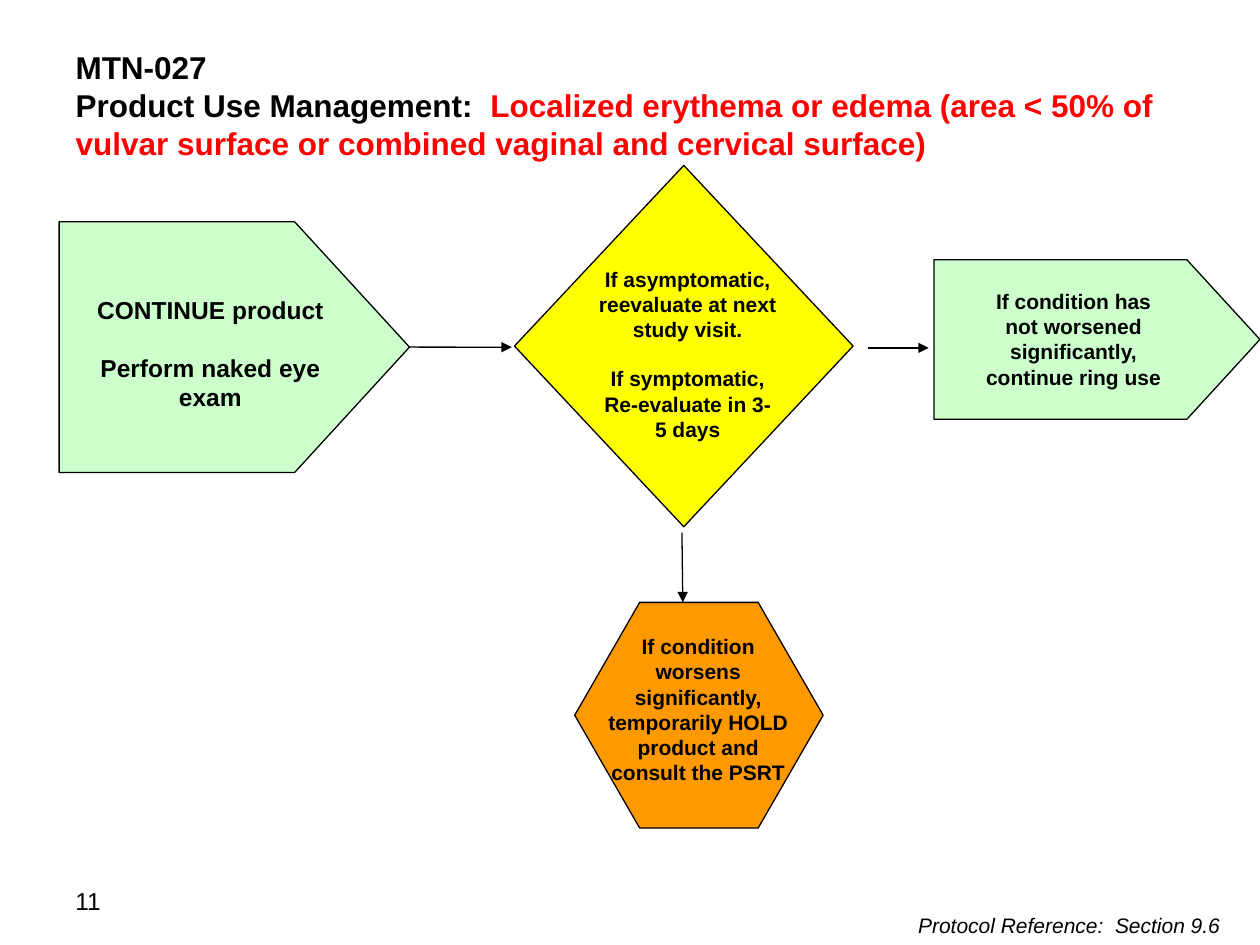
from lxml.etree import SubElement
from pptx import Presentation
from pptx.dml.color import RGBColor
from pptx.enum.shapes import MSO_CONNECTOR, MSO_SHAPE
from pptx.enum.text import MSO_ANCHOR, MSO_AUTO_SIZE, PP_ALIGN
from pptx.oxml.ns import qn
from pptx.util import Pt

BLACK, RED = "000000", "FF0000"
GREEN, YELLOW, ORANGE = "CCFFCC", "FFFF00", "FF9900"


def color(hex_value):
    return RGBColor.from_string(hex_value)


def write(holder, box, paragraphs, size, align, bold=False, italic=False, gap=0):
    """Place a text holder and fill it; each paragraph is a list of (text, colour) runs."""
    holder.left, holder.top, holder.width, holder.height = map(Pt, box)
    frame = holder.text_frame
    frame.word_wrap = True
    frame.auto_size = MSO_AUTO_SIZE.NONE
    frame.vertical_anchor = MSO_ANCHOR.TOP
    for index, runs in enumerate(paragraphs):
        paragraph = frame.add_paragraph() if index else frame.paragraphs[0]
        paragraph.alignment = align
        paragraph.space_before = Pt(gap if index else 0)
        for text, ink in runs:
            run = paragraph.add_run()
            run.text = text
            run.font.name = "Arial"
            run.font.size = Pt(size)
            run.font.bold = bold
            run.font.italic = italic
            run.font.color.rgb = color(ink)


prs = Presentation()
prs.slide_width, prs.slide_height = Pt(720), Pt(540)
slide = prs.slides.add_slide(prs.slide_layouts[5])
shapes = slide.shapes

write(shapes.title, (36, 24, 648, 72.5), [
    [("MTN-027", BLACK)],
    [("Product Use Management:  ", BLACK),
     ("Localized erythema or edema (area < 50% of vulvar surface or combined "
      "vaginal and cervical surface)", RED)],
], 18, PP_ALIGN.LEFT, bold=True)

# Flowchart steps: preset, box, adjustment, fill, label box, label size, label paragraphs
steps = [
    (MSO_SHAPE.PENTAGON, (33.8, 126.7, 200.2, 143.3), 0.458, GREEN,
     (36, 165, 168.5, 92), 14, ["CONTINUE product", "Perform naked eye exam"]),
    (MSO_SHAPE.DIAMOND, (294, 94.5, 193.5, 206.5), None, YELLOW,
     (335, 148.5, 116, 109), 12,
     ["If asymptomatic, reevaluate at next study visit.",
      "If symptomatic, Re-evaluate in 3-5 days"]),
    (MSO_SHAPE.PENTAGON, (533.7, 148.4, 186.3, 91.2), 0.458, GREEN,
     (551.5, 161.3, 124, 65.5), 12,
     ["If condition has not worsened significantly, continue ring use"]),
    (MSO_SHAPE.HEXAGON, (328.4, 344.2, 142, 129), 0.288, ORANGE,
     (337, 358.6, 124, 94.5), 12,
     ["If condition worsens significantly, temporarily HOLD product and consult the PSRT"]),
]
step_shapes = []
for preset, box, adjustment, fill, label_box, size, label in steps:
    step = shapes.add_shape(preset, *map(Pt, box))
    step.shadow.inherit = False
    if adjustment is not None:
        step.adjustments[0] = adjustment
    step.fill.solid()
    step.fill.fore_color.rgb = color(fill)
    step.line.color.rgb = color(BLACK)
    step.line.width = Pt(0.75)
    step_shapes.append(step)
    write(shapes.add_textbox(0, 0, 0, 0), label_box, [[(text, BLACK)] for text in label],
          size, PP_ALIGN.CENTER, bold=True, gap=size * 1.15)

arrows = []
for ends in [(234, 198.4, 292.5, 198.4), (496, 198.8, 530.7, 198.8), (389.7, 304.3, 390.2, 344.2)]:
    arrow = shapes.add_connector(MSO_CONNECTOR.STRAIGHT, *map(Pt, ends))
    arrow.line.color.rgb = color(BLACK)
    arrow.line.width = Pt(0.75)
    SubElement(arrow.line._get_or_add_ln(), qn("a:tailEnd"), type="triangle")
    SubElement(arrow._element.spPr, qn("a:effectLst"))
    arrows.append(arrow)
arrows[0].begin_connect(step_shapes[0], 3)

write(shapes.add_textbox(0, 0, 0, 0), (36, 502.5, 168, 37.5), [[("11", BLACK)]],
      14, PP_ALIGN.LEFT)
write(shapes.add_textbox(0, 0, 0, 0), (434.5, 518, 270, 22),
      [[("Protocol Reference:  Section 9.6", BLACK)]], 12, PP_ALIGN.RIGHT, italic=True)

prs.save("out.pptx")
